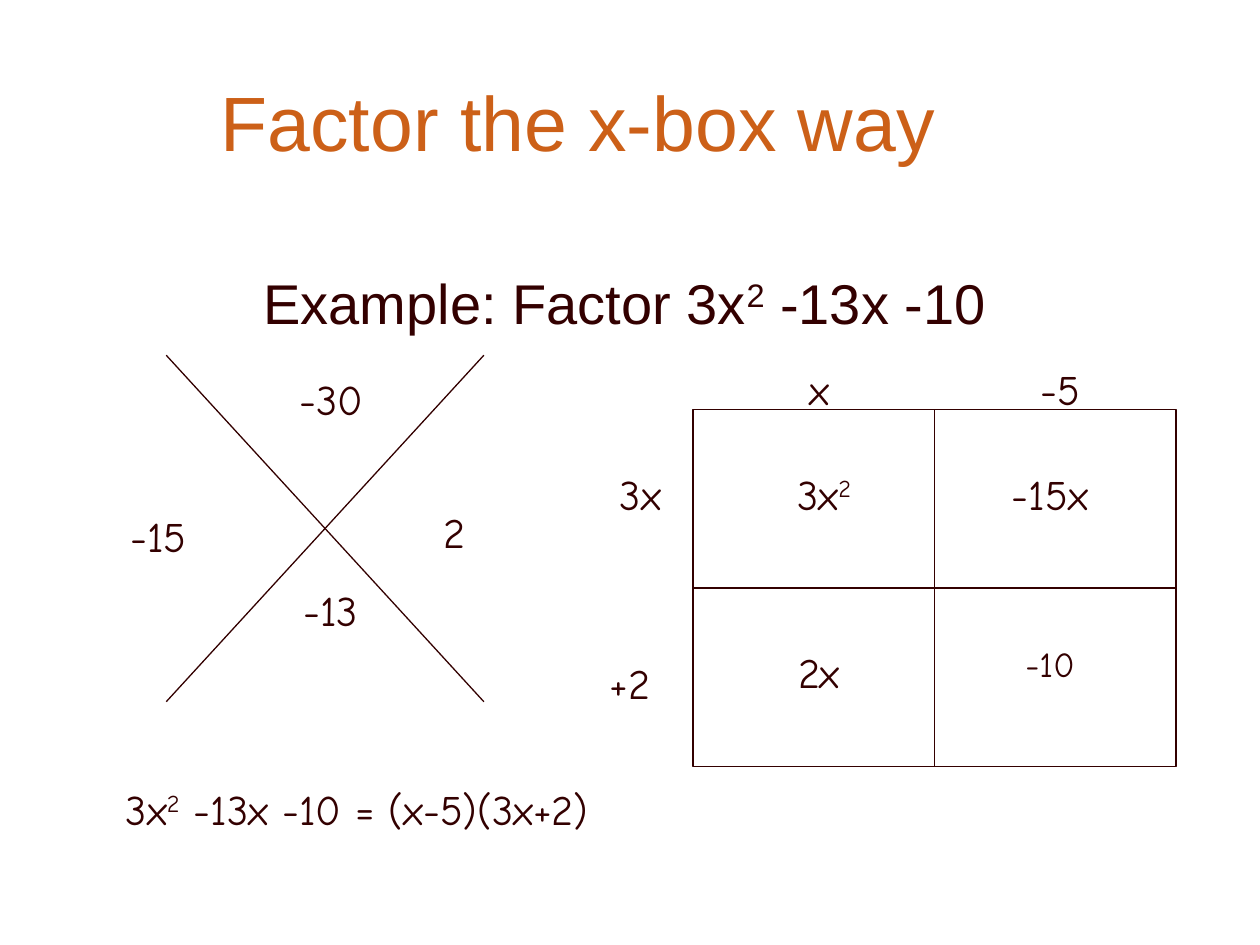
from lxml import etree
from pptx import Presentation
from pptx.dml.color import RGBColor
from pptx.enum import shapes as sh, text as tx
from pptx.oxml.ns import qn
from pptx.util import Pt

INK, RUST = "330000", "CC6018"
HAND, SANS = "Comic Neue", "Arial"


def paint(hue):
    return RGBColor.from_string(hue)


def place(box):
    return [Pt(n) for n in box]


def write(frame, runs, size, face, hue=INK):
    """Fill one centred paragraph; a run that starts with ^ is raised."""
    para = frame.paragraphs[0]
    para.alignment = tx.PP_ALIGN.CENTER
    for part in runs:
        run = para.add_run()
        run.text = part.lstrip("^")
        run.font.size = Pt(size)
        run.font.name = face
        run.font.color.rgb = paint(hue)
        if part.startswith("^"):
            run._r.get_or_add_rPr().set("baseline", "30000")


def title(slide, words, box):
    head = slide.shapes.title
    head.left, head.top, head.width, head.height = place(box)
    head.text_frame.vertical_anchor = tx.MSO_ANCHOR.MIDDLE
    write(head.text_frame, [words], 44, SANS, RUST)


def label(slide, runs, box, size=24, face=HAND):
    frame = slide.shapes.add_textbox(*place(box)).text_frame
    frame.word_wrap = True
    if face == HAND:
        frame.auto_size = tx.MSO_AUTO_SIZE.SHAPE_TO_FIT_TEXT
    write(frame, runs, size, face)


def line(slide, ends):
    rule = slide.shapes.add_connector(sh.MSO_CONNECTOR.STRAIGHT, *place(ends))
    rule.line.color.rgb = paint(INK)
    rule.line.width = Pt(0.75)
    etree.SubElement(rule._element.spPr, qn("a:effectLst"))
    return rule


def cross(slide, left, top, right, low):
    line(slide, (left, top, right, low))
    line(slide, (right, top, left, low))


def grid(slide, left, top, wide, high):
    """Draw a box split into four by lines joined to its sides."""
    rect = slide.shapes.add_shape(
        sh.MSO_SHAPE.RECTANGLE, *place((left, top, wide, high)))
    rect.shadow.inherit = False
    rect.fill.background()
    rect.line.color.rgb = paint(INK)
    rect.line.width = Pt(0.75)
    midx, midy = left + wide / 2, top + high / 2
    for ends, start, stop in (
            ((midx, top, midx, top + high), 0, 2),
            ((left, midy, left + wide, midy), 1, 3)):
        rule = line(slide, ends)
        rule.begin_connect(rect, start)
        rule.end_connect(rect, stop)


def main():
    deck = Presentation()
    deck.slide_width, deck.slide_height = Pt(720), Pt(540)
    slide = deck.slides.add_slide(deck.slide_layouts[5])

    title(slide, "Factor the x-box way", (60, 30, 541, 78))
    label(slide, ["Example: Factor 3x", "^2", " -13x -10"],
          (54, 150, 606, 282), 32, SANS)

    cross(slide, 95, 203, 276.5, 401)
    grid(slide, 396, 234, 276, 204)

    high = 36
    for runs, left, top, wide in (
            (["-13"], 134, 330.5, 110),
            (["-30"], 115, 210, 149),
            (["-15"], 54, 288, 73),
            (["2"], 232.5, 286, 55),
            (["-15x"], 546, 264, 108),
            (["2x"], 414, 366, 108),
            (["3x", "^2"], 438, 264, 66),
            (["x"], 426, 204, 84),
            (["-5"], 558, 204, 96),
            (["3x"], 336, 264, 60),
            (["+2"], 330, 372, 60),
            (["3x", "^2", " -13x -10 = (x-5)(3x+2)"], 6, 444, 396)):
        label(slide, runs, (left, top, wide, high))
    label(slide, ["-10"], (564, 363.5, 72, 31), 20)

    deck.save("out.pptx")


if __name__ == "__main__":
    main()
